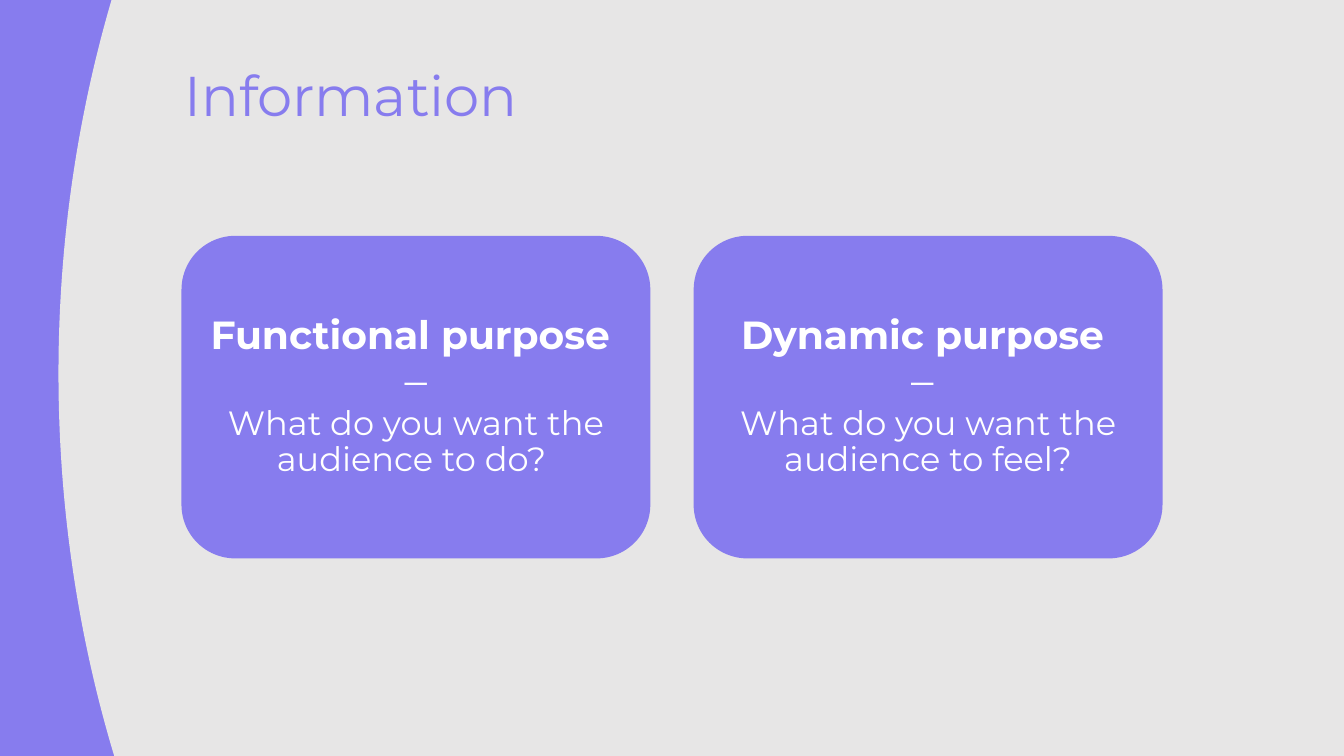
from pptx import Presentation
from pptx.dml.color import RGBColor
from pptx.enum.shapes import MSO_SHAPE
from pptx.enum.text import MSO_ANCHOR, PP_ALIGN
from pptx.util import Inches, Pt

PURPLE, GREY, WHITE = "877CEE", "E7E6E6", "FFFFFF"


def color(value):
    return RGBColor.from_string(value)


class SlideBuilder:
    font_name = "Montserrat"

    def __init__(self, page):
        self.page = page

    def shape(self, kind, left, top, width, height, fill):
        shape = self.page.shapes.add_shape(
            kind, Inches(left), Inches(top), Inches(width), Inches(height))
        shape.shadow.inherit = False
        shape.fill.solid()
        shape.fill.fore_color.rgb = color(fill)
        shape.line.fill.background()

    def text(self, left, top, width, height, lines, ink, inset=0.1,
             anchor=MSO_ANCHOR.TOP, align=PP_ALIGN.LEFT, spacing=1.0):
        """Add one paragraph whose lines are (wording, size, bold) tuples."""
        box = self.page.shapes.add_textbox(
            Inches(left), Inches(top), Inches(width), Inches(height))
        frame = box.text_frame
        frame.word_wrap = True
        frame.vertical_anchor = anchor
        frame.margin_left = frame.margin_right = Inches(inset)
        frame.margin_top = frame.margin_bottom = Inches(inset)
        para = frame.paragraphs[0]
        para.alignment = align
        para.line_spacing = spacing
        para.font.name = self.font_name
        para.font.color.rgb = color(ink)
        for index, (wording, size, bold) in enumerate(lines):
            if index:
                para.add_line_break()
            span = para.add_run()
            span.text = wording
            span.font.size = Pt(size)
            span.font.bold = bold

    def card(self, left, heading, dash, question):
        top, width, height, pad = 2.34, 4.65, 3.2, 0.16
        self.shape(MSO_SHAPE.ROUNDED_RECTANGLE, left, top, width, height, PURPLE)
        self.text(left + pad, top + pad, width - 2 * pad, height - 2 * pad,
                  [(heading, 28, True), (dash, 32, False), (question, 24, False)],
                  WHITE, 0.12, MSO_ANCHOR.MIDDLE, PP_ALIGN.CENTER, 0.9)


def main():
    deck = Presentation()
    deck.slide_width, deck.slide_height = Inches(13.33), Inches(7.5)
    builder = SlideBuilder(deck.slides.add_slide(deck.slide_layouts[6]))

    builder.shape(MSO_SHAPE.RECTANGLE, 0, 0, 13.33, 7.5, PURPLE)
    builder.shape(MSO_SHAPE.OVAL, 0.58, -7.05, 17.19, 21.51, GREY)
    builder.text(1.73, 0.5, 8.92, 0.63, [("Information", 40, False)], PURPLE)

    cards = [
        ("Functional purpose ", "–", "What do you want the audience to do? "),
        ("Dynamic purpose ", "– ", "What do you want the audience to feel?"),
    ]
    for index, wording in enumerate(cards):
        builder.card(1.8 + index * 5.08, *wording)

    deck.save("out.pptx")


if __name__ == "__main__":
    main()
